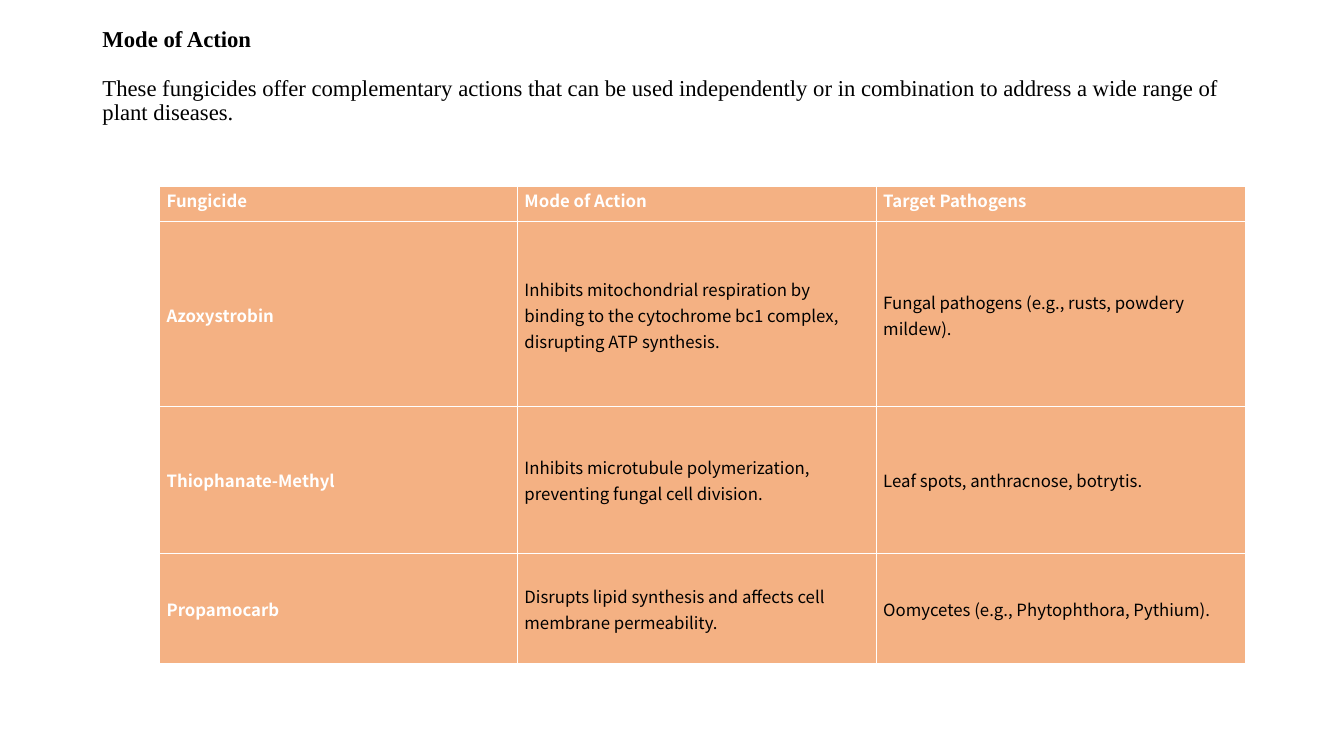
from copy import deepcopy

from pptx import Presentation
from pptx.dml.color import RGBColor
from pptx.enum.text import MSO_ANCHOR as Anchor, MSO_AUTO_SIZE as AutoSize, PP_ALIGN as Align
from pptx.oxml.ns import qn
from pptx.util import Pt

BLACK, WHITE, ORANGE = "000000", "FFFFFF", "F4B183"
HEADING = "Mode of Action"
SUMMARY = (
    "These fungicides offer complementary actions that can be used independently "
    "or in combination to address a wide range of plant diseases."
)
COLUMN_WIDTHS = (255.6, 256.3, 263.5)
ROW_HEIGHTS = (25.2, 131.8, 105.1, 78.5)
FUNGICIDES = (
    ("Fungicide", "Mode of Action", "Target Pathogens"),
    (
        "Azoxystrobin",
        "Inhibits mitochondrial respiration by binding to the cytochrome bc1 complex, "
        "disrupting ATP synthesis.",
        "Fungal pathogens (e.g., rusts, powdery mildew).",
    ),
    (
        "Thiophanate-Methyl",
        "Inhibits microtubule polymerization, preventing fungal cell division.",
        "Leaf spots, anthracnose, botrytis.",
    ),
    (
        "Propamocarb",
        "Disrupts lipid synthesis and affects cell membrane permeability.",
        "Oomycetes (e.g., Phytophthora, Pythium).",
    ),
)


def color(hex_string):
    """Return the colour for a hex string."""
    return RGBColor.from_string(hex_string)


def format_run(run, name, size, hex_string, bold):
    """Set the font of a run."""
    run.font.name = name
    run.font.size = Pt(size)
    run.font.bold = bold
    run.font.color.rgb = color(hex_string)


def add_title(slide, left, top, width, height):
    """Fill the title placeholder with the heading and its summary."""
    title = slide.shapes.title
    title.left, title.top, title.width, title.height = map(Pt, (left, top, width, height))
    text_frame = title.text_frame
    text_frame.text = f"{HEADING}\v\v{SUMMARY}\v"
    text_frame.word_wrap = True
    text_frame.auto_size = AutoSize.NONE
    text_frame.vertical_anchor = Anchor.MIDDLE
    paragraph = text_frame.paragraphs[0]
    paragraph.alignment = Align.LEFT
    paragraph.line_spacing = 0.9
    for run, bold in zip(paragraph.runs, (True, False)):
        format_run(run, "Times New Roman", 16.2, BLACK, bold)
    for line_break in paragraph._p.findall(qn("a:br")):
        line_break.append(deepcopy(paragraph.runs[0]._r.rPr))
    paragraph._p.get_or_add_endParaRPr().set("sz", "4400")


def fill_cell(cell, text, is_header, is_label):
    """Write and format one table cell."""
    cell.fill.solid()
    cell.fill.fore_color.rgb = color(ORANGE)
    cell.margin_left = cell.margin_right = Pt(5)
    cell.margin_top = cell.margin_bottom = Pt(0)
    cell.vertical_anchor = Anchor.TOP if is_header else Anchor.MIDDLE
    cell.text_frame.text = text
    paragraph = cell.text_frame.paragraphs[0]
    paragraph.line_spacing = 1.07
    paragraph.space_after = Pt(8)
    strong = is_header or is_label
    format_run(paragraph.runs[0], "Noto Sans CJK SC", 12, WHITE if strong else BLACK, strong)


def add_fungicide_table(slide, left, top):
    """Add the table of fungicides at the given corner."""
    box = map(Pt, (left, top, sum(COLUMN_WIDTHS), sum(ROW_HEIGHTS)))
    table = slide.shapes.add_table(len(ROW_HEIGHTS), len(COLUMN_WIDTHS), *box).table
    table.first_col = True
    table.horz_banding = False
    for column, width in zip(table.columns, COLUMN_WIDTHS):
        column.width = Pt(width)
    for row_index, (row, height) in enumerate(zip(table.rows, ROW_HEIGHTS)):
        row.height = Pt(height)
        for column_index, text in enumerate(FUNGICIDES[row_index]):
            fill_cell(row.cells[column_index], text, row_index == 0, column_index == 0)


def main():
    """Build and save the presentation."""
    presentation = Presentation()
    presentation.slide_width, presentation.slide_height = Pt(960), Pt(540)
    slide = presentation.slides.add_slide(presentation.slide_layouts[5])
    add_title(slide, 66, 28.8, 828, 104.4)
    add_fungicide_table(slide, 114, 133.2)
    presentation.save("out.pptx")


if __name__ == "__main__":
    main()
